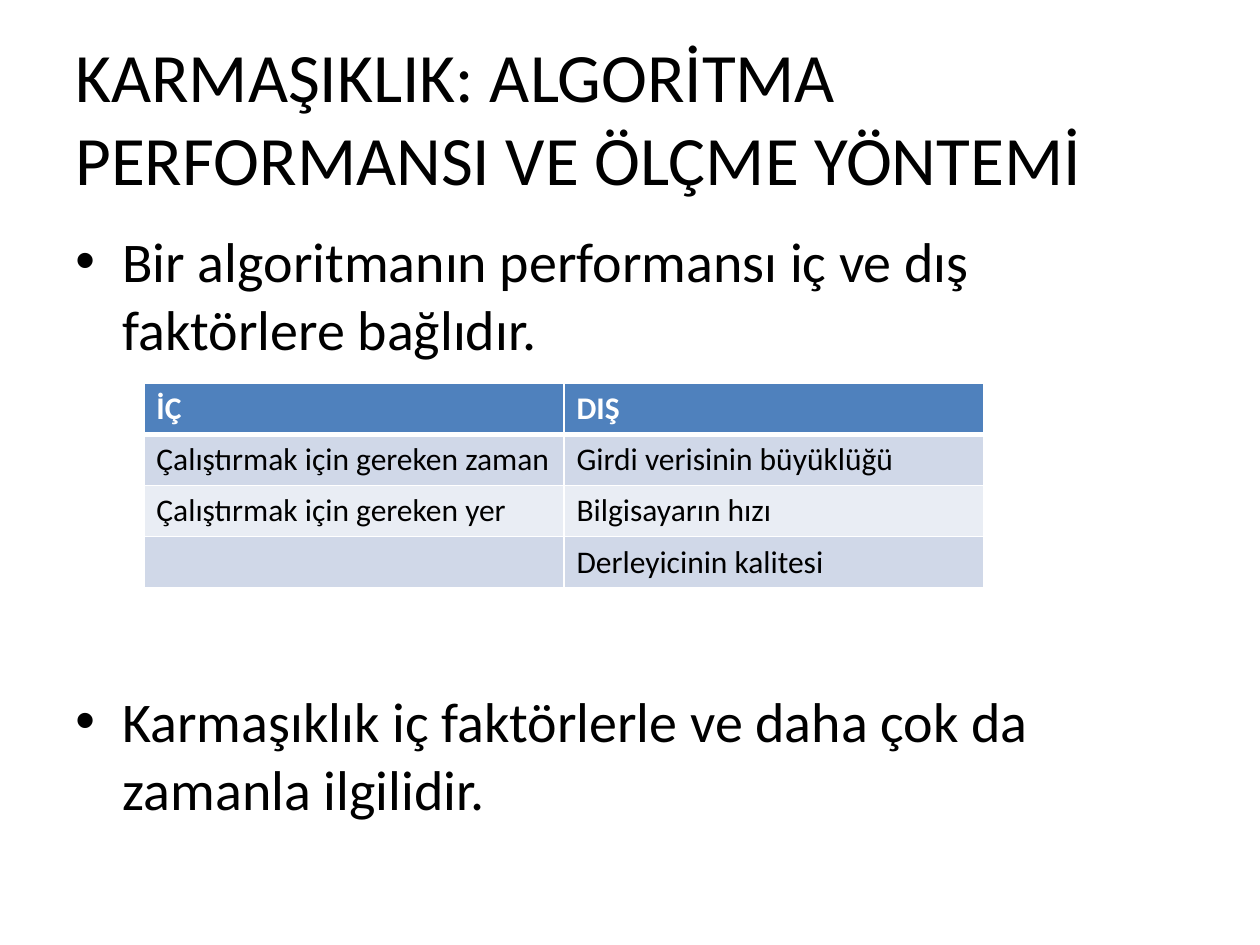
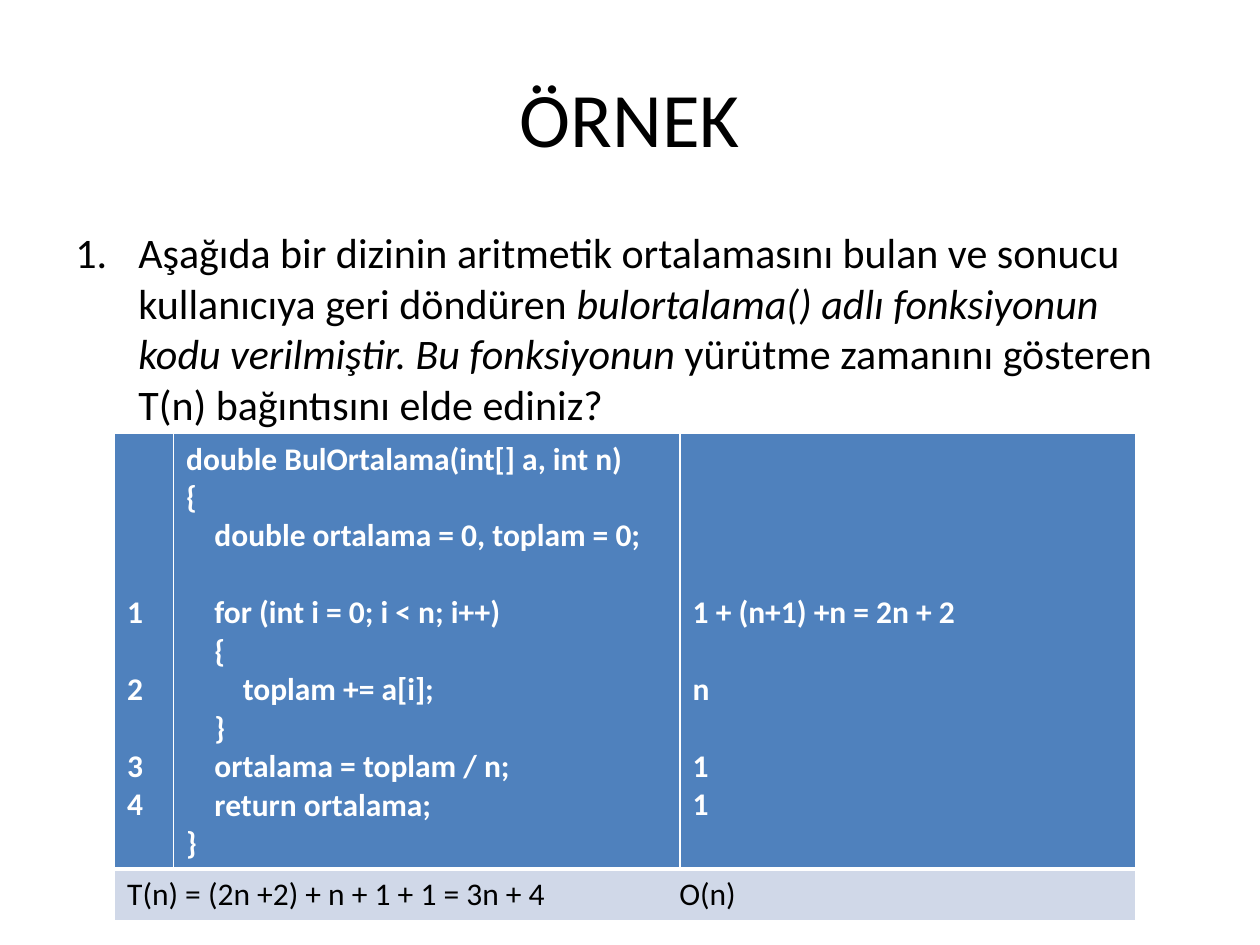
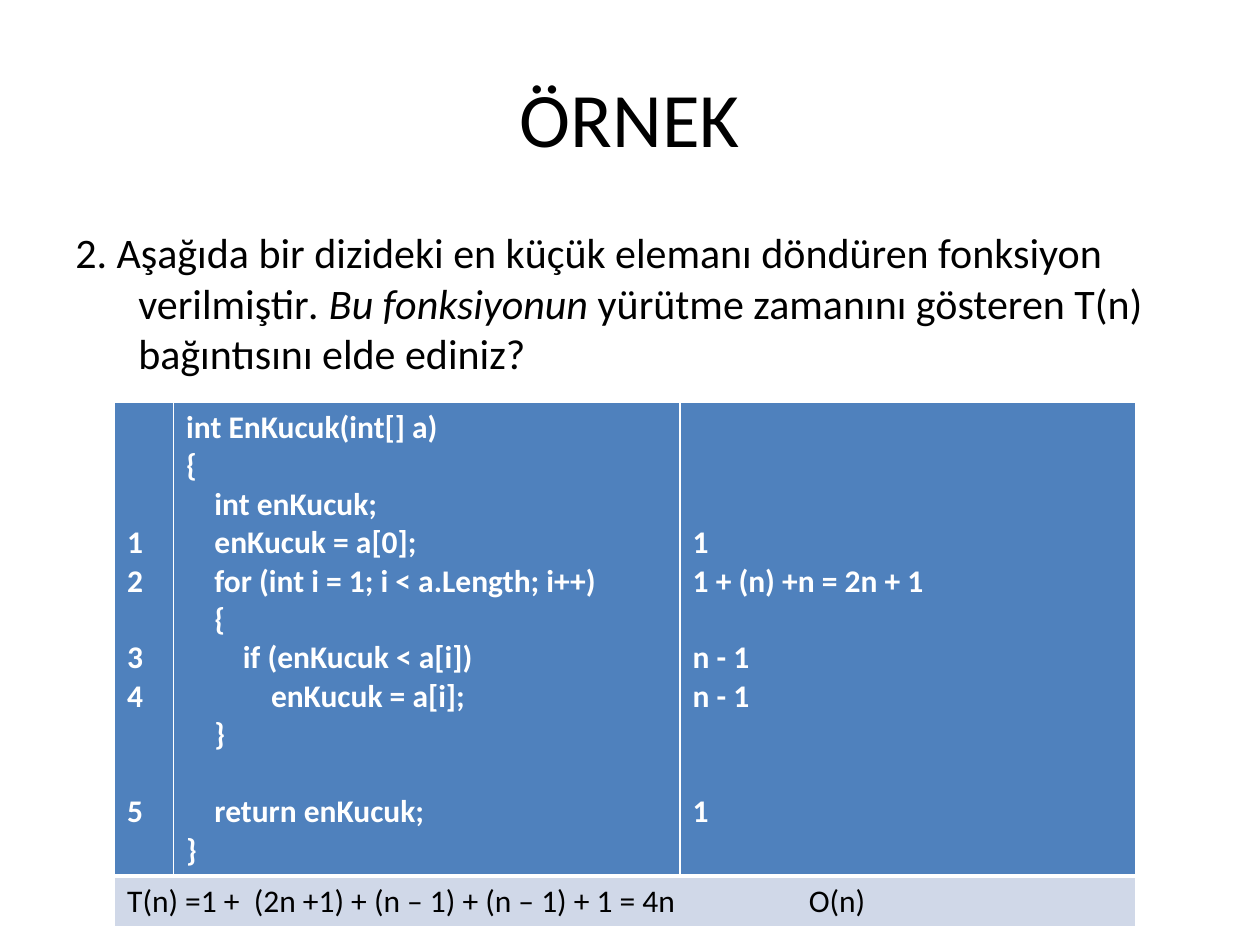
from pptx import Presentation
from pptx.dml.color import RGBColor
from pptx.enum.text import MSO_ANCHOR, PP_ALIGN
from pptx.oxml.ns import qn
from pptx.util import Cm, Pt
from lxml.etree import SubElement

FONT = "Calibri"
BLACK, WHITE = "000000", "FFFFFF"
HEADER, BAND_DARK, BAND_LIGHT = "4F81BD", "D0D8E8", "E9EDF4"
TITLE_BOX = (1.27, 0.76, 22.86, 3.18)
BODY_BOX = (1.27, 4.45, 22.86, 12.57)
ROW_HEIGHT = 1.03
CELL_SIZE = 18
LINE = CELL_SIZE * 1.22  # line height in points
CELL_PADDING = Cm(0.13)
CODE_INDENT = 0.57

FACTORS = {
    "title": "KARMAŞIKLIK: ALGORİTMA PERFORMANSI VE ÖLÇME YÖNTEMİ",
    "points": [
        "Bir algoritmanın performansı iç ve dış faktörlere bağlıdır.",
        "Karmaşıklık iç faktörlerle ve daha çok da zamanla ilgilidir.",
    ],
    "table": [
        ("İÇ", "DIŞ"),
        ("Çalıştırmak için gereken zaman", "Girdi verisinin büyüklüğü"),
        ("Çalıştırmak için gereken yer", "Bilgisayarın hızı"),
        ("", "Derleyicinin kalitesi"),
    ],
}

# Question runs are (text, italic); code lines are (step, level, code, cost).
EXAMPLES = [
    {
        "numbered": True,
        "question": [
            ("Aşağıda bir dizinin aritmetik ortalamasını bulan ve sonucu "
             "kullanıcıya geri döndüren ", False),
            ("bulortalama() adlı fonksiyonun kodu verilmiştir. Bu fonksiyonun ", True),
            ("yürütme zamanını gösteren T(n) bağıntısını elde ediniz?", False),
        ],
        "table_top": 8.74,
        "code": [
            ("", 0, "double BulOrtalama(int[] a, int n)", ""),
            ("", 0, "{", ""),
            ("", 1, "double ortalama = 0, toplam = 0;", ""),
            ("", 0, "", ""),
            ("1", 1, "for (int i = 0; i < n; i++)", "1 + (n+1) +n = 2n + 2"),
            ("", 1, "{", ""),
            ("2", 2, "toplam += a[i];", "n"),
            ("", 1, "}", ""),
            ("3", 1, "ortalama = toplam / n;", "1"),
            ("4", 1, "return ortalama;", "1"),
            ("", 0, "}", ""),
        ],
        "total": "T(n) = (2n +2) + n + 1 + 1 = 3n + 4",
        "order_at": 11.13,
    },
    {
        "numbered": False,
        "question": [
            ("2. Aşağıda bir dizideki en küçük elemanı döndüren fonksiyon verilmiştir", False),
            (". Bu fonksiyonun ", True),
            ("yürütme zamanını gösteren T(n) bağıntısını elde ediniz?", False),
        ],
        "table_top": 8.1,
        "code": [
            ("", 0, "int EnKucuk(int[] a)", ""),
            ("", 0, "{", ""),
            ("", 1, "int enKucuk;", ""),
            ("1", 1, "enKucuk = a[0];", "1"),
            ("2", 1, "for (int i = 1; i < a.Length; i++)", "1 + (n) +n = 2n + 1"),
            ("", 1, "{", ""),
            ("3", 2, "if (enKucuk < a[i])", "n - 1"),
            ("4", 3, "enKucuk = a[i];", "n - 1"),
            ("", 1, "}", ""),
            ("", 0, "", ""),
            ("5", 1, "return enKucuk;", "1"),
            ("", 0, "}", ""),
        ],
        "total": "T(n) =1 +  (2n +1) + (n – 1) + (n – 1) + 1 = 4n",
        "order_at": 13.74,
    },
]


def rgb(color):
    return RGBColor.from_string(color)


def style(paragraph, size, color=BLACK, bold=False):
    font = paragraph.font
    font.name, font.size, font.bold = FONT, Pt(size), bold
    font.color.rgb = rgb(color)


def indent(paragraph, left, first=0):
    properties = paragraph._p.get_or_add_pPr()
    properties.set("marL", str(Cm(left)))
    properties.set("indent", str(Cm(first)))


def add_mark(paragraph, tag, **attributes):
    """Add a bullet or a tab list ahead of the paragraph's font settings."""
    properties = paragraph._p.get_or_add_pPr()
    mark = SubElement(properties, qn(tag), attributes)
    font_settings = properties.find(qn("a:defRPr"))
    if font_settings is not None:
        font_settings.addprevious(mark)
    return mark


def add_paragraph(frame, is_first):
    return frame.paragraphs[0] if is_first else frame.add_paragraph()


def add_text_box(slide, box):
    frame = slide.shapes.add_textbox(*map(Cm, box)).text_frame
    frame.word_wrap = True
    return frame


def add_title(slide, text, size, alignment):
    frame = add_text_box(slide, TITLE_BOX)
    frame.vertical_anchor = MSO_ANCHOR.MIDDLE
    paragraph = frame.paragraphs[0]
    paragraph.text, paragraph.alignment = text, alignment
    style(paragraph, size)


def add_table(slide, left, top, widths, heights):
    shape = slide.shapes.add_table(len(heights), len(widths), Cm(left), Cm(top),
                                   Cm(sum(widths)), Cm(sum(heights)))
    table = shape.table
    for column, width in zip(table.columns, widths):
        column.width = Cm(width)
    for row, height in zip(table.rows, heights):
        row.height = Cm(height)
    return table


def paint_table(table):
    """Fill the header and the bands, with a thick rule under the header."""
    for row_index, row in enumerate(table.rows):
        fill = HEADER if row_index == 0 else (BAND_LIGHT, BAND_DARK)[row_index % 2]
        widths = {"L": 1, "R": 1, "T": 3 if row_index == 1 else 1,
                  "B": 3 if row_index == 0 else 1}
        for cell in row.cells:
            if cell.is_spanned:
                continue
            properties = cell._tc.get_or_add_tcPr()
            for side, width in widths.items():
                line = SubElement(properties, qn("a:ln" + side), w=str(Pt(width)))
                SubElement(SubElement(line, qn("a:solidFill")), qn("a:srgbClr"), val=WHITE)
            cell.fill.solid()
            cell.fill.fore_color.rgb = rgb(fill)


def write_lines(cell, lines):
    """Write (level, text) lines; empty ones become space above the next."""
    skipped, is_first = 0, True
    for level, text in lines:
        if not text:
            skipped += 1
            continue
        paragraph = add_paragraph(cell.text_frame, is_first)
        paragraph.text = text
        style(paragraph, CELL_SIZE, WHITE, bold=True)
        indent(paragraph, level * CODE_INDENT)
        if is_first:
            cell.margin_top = CELL_PADDING + Pt(skipped * LINE)
        elif skipped:
            paragraph.space_before = Pt(skipped * LINE)
        skipped, is_first = 0, False


def add_factors_slide(slide):
    add_title(slide, FACTORS["title"], 39.6, PP_ALIGN.LEFT)
    frame = add_text_box(slide, BODY_BOX)
    for index, text in enumerate(FACTORS["points"]):
        paragraph = add_paragraph(frame, index == 0)
        paragraph.text = text
        style(paragraph, 32)
        indent(paragraph, 0.95, -0.95)
        add_mark(paragraph, "a:buFont", typeface="Arial")
        add_mark(paragraph, "a:buChar", char="•")
    frame.paragraphs[1].space_before = Pt(186)  # room for the table

    rows = FACTORS["table"]
    table = add_table(slide, 2.9, 7.73, [8.47] * 2, [ROW_HEIGHT] * len(rows))
    for row_index, row in enumerate(rows):
        for column_index, text in enumerate(row):
            paragraph = table.cell(row_index, column_index).text_frame.paragraphs[0]
            paragraph.text = text
            is_header = row_index == 0
            style(paragraph, CELL_SIZE, WHITE if is_header else BLACK, is_header)
    paint_table(table)


def add_example_slide(slide, example):
    add_title(slide, "ÖRNEK", 44, PP_ALIGN.CENTER)
    paragraph = add_text_box(slide, BODY_BOX).paragraphs[0]
    style(paragraph, 24)
    indent(paragraph, 1.27, -1.27)
    if example["numbered"]:
        add_mark(paragraph, "a:buFont", typeface=FONT)
        add_mark(paragraph, "a:buAutoNum", type="arabicPeriod")
    for text, italic in example["question"]:
        run = paragraph.add_run()
        run.text, run.font.italic = text, italic

    code = example["code"]
    code_height = Pt(len(code) * LINE).cm + 2 * CELL_PADDING.cm
    table = add_table(slide, 2.31, example["table_top"], [1.19, 10.21, 9.19],
                      [code_height, ROW_HEIGHT])
    steps, code_cell, costs = table.rows[0].cells
    write_lines(steps, [(0, step) for step, _, _, _ in code])
    write_lines(code_cell, [(level, text) for _, level, text, _ in code])
    write_lines(costs, [(0, cost) for _, _, _, cost in code])

    total = table.cell(1, 0)
    total.merge(table.cell(1, 2))
    paragraph = total.text_frame.paragraphs[0]
    paragraph.text = example["total"] + "\tO(n)"
    style(paragraph, CELL_SIZE)
    tabs = add_mark(paragraph, "a:tabLst")
    SubElement(tabs, qn("a:tab"), pos=str(Cm(example["order_at"])), algn="l")
    paint_table(table)


def main():
    presentation = Presentation()
    presentation.slide_width, presentation.slide_height = Cm(25.4), Cm(19.05)
    blank = presentation.slide_layouts[6]
    add_factors_slide(presentation.slides.add_slide(blank))
    for example in EXAMPLES:
        add_example_slide(presentation.slides.add_slide(blank), example)
    presentation.save("out.pptx")


if __name__ == "__main__":
    main()
